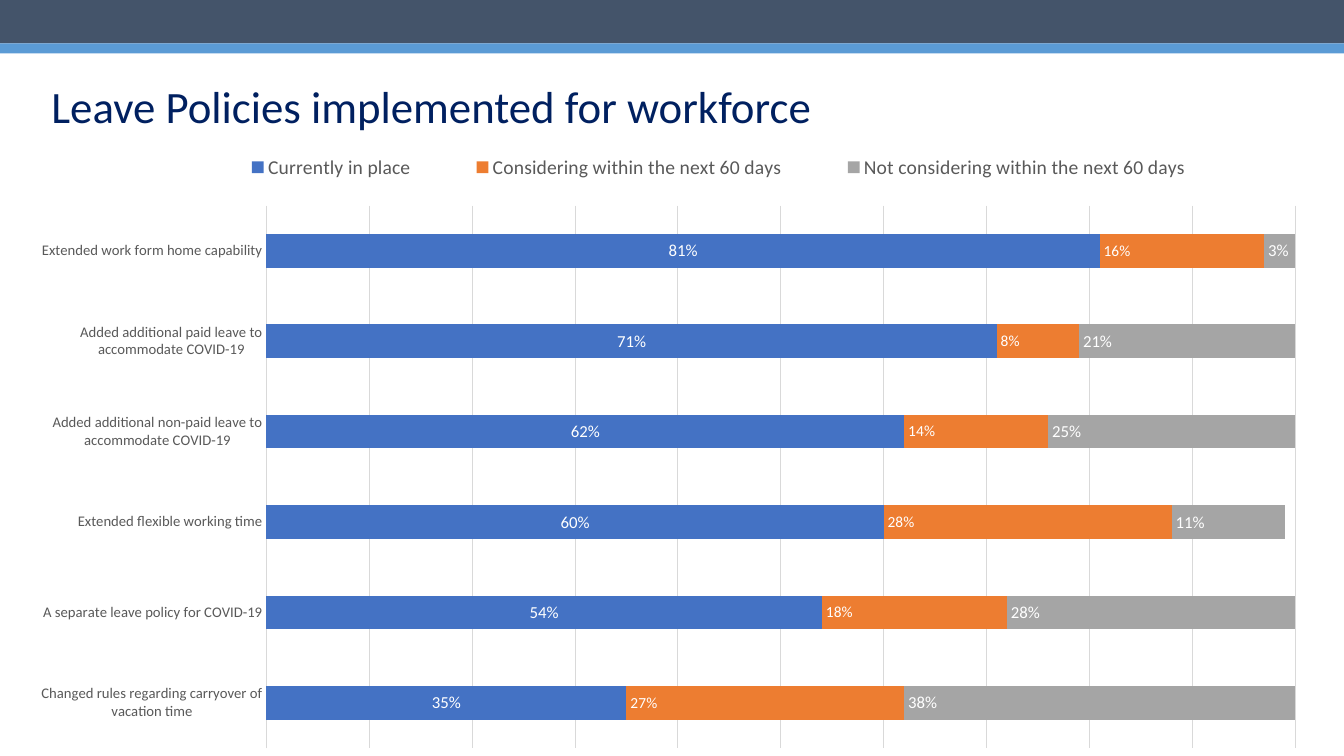
from lxml import etree
from pptx import Presentation
from pptx import util as u
from pptx.chart.data import CategoryChartData
from pptx.dml.color import RGBColor
from pptx.enum import chart as ch, shapes, text
from pptx.oxml.ns import qn

TITLE = "Leave Policies implemented for workforce"
FONT = "Calibri"
COLORS = {
    "navy": "44546A", "sky": "5B9BD5", "title": "002060", "label": "595959",
    "grid": "D9D9D9", "white": "FFFFFF", "black": "000000",
    "blue": "4472C4", "orange": "ED7D31", "gray": "A5A5A5",
}
BANDS = [("navy", 0.43), ("sky", 0.1)]
SERIES = [
    ("Currently in place", "blue", 12, ch.XL_LABEL_POSITION.CENTER),
    ("Considering within the next 60 days", "orange", 11, ch.XL_LABEL_POSITION.INSIDE_BASE),
    ("Not considering within the next 60 days", "gray", 12, ch.XL_LABEL_POSITION.INSIDE_BASE),
]
POLICIES = [
    ("Extended work form home capability", 0.81, 0.16, 0.03),
    ("Added additional paid leave to accommodate COVID-19", 0.71, 0.08, 0.21),
    ("Added additional non-paid leave to accommodate COVID-19", 0.62, 0.14, 0.25),
    ("Extended flexible working time", 0.6, 0.28, 0.11),
    ("A separate leave policy for COVID-19", 0.54, 0.18, 0.28),
    ("Changed rules regarding carryover of vacation time", 0.35, 0.27, 0.38),
]
WIDTH, HEIGHT = 13.33, 7.5
TITLE_BOX = (0.41, 0.36, 13.33, 1.45)
CHART_BOX = (0.41, 1.38, 12.44, 6.22)
PLOT_SHARE = (0.179, 0.106, 0.821, 0.866)
LEGEND_SHARE = (0.12, 0.01, 0.84, 0.07)


def rgb(name):
    return RGBColor.from_string(COLORS[name])


def inches(box):
    return [u.Inches(v) for v in box]


def style(font, size, color):
    font.name, font.size = FONT, u.Pt(size)
    font.color.rgb = rgb(color)


def grid_line(line):
    line.color.rgb = rgb("grid")
    line.width = u.Pt(0.75)


def place(parent, index, share, inner=False):
    for old in parent.findall(qn("c:layout")):
        parent.remove(old)
    layout = etree.Element(qn("c:layout"))
    manual = etree.SubElement(layout, qn("c:manualLayout"))
    settings = [("layoutTarget", "inner")] if inner else []
    settings += [("xMode", "edge"), ("yMode", "edge")]
    settings += zip("xywh", share)
    for tag, value in settings:
        etree.SubElement(manual, qn("c:" + tag)).set("val", str(value))
    parent.insert(index, layout)


def add_bands(s):
    top = 0
    for color, height in BANDS:
        sp = s.shapes.add_shape(shapes.MSO_SHAPE.RECTANGLE, *inches((0, top, WIDTH, height)))
        sp.shadow.inherit = False
        sp.fill.solid()
        sp.fill.fore_color.rgb = rgb(color)
        sp.line.fill.background()
        top += height


def add_title(s):
    title = s.shapes.title
    title.left, title.top, title.width, title.height = inches(TITLE_BOX)
    tf = title.text_frame
    tf.text = TITLE
    tf.word_wrap = True
    tf.auto_size = text.MSO_AUTO_SIZE.NONE
    tf.vertical_anchor = text.MSO_ANCHOR.MIDDLE
    p = tf.paragraphs[0]
    p.alignment, p.line_spacing = text.PP_ALIGN.LEFT, 0.9
    style(p.font, 32, "title")


def add_policy_chart(s):
    rows = POLICIES[::-1]
    data = CategoryChartData(number_format="0%")
    data.categories = [row[0] for row in rows]
    for i, (name, *_) in enumerate(SERIES, 1):
        data.add_series(name, [row[i] for row in rows])
    chart = s.shapes.add_chart(ch.XL_CHART_TYPE.BAR_STACKED, *inches(CHART_BOX), data).chart
    style(chart.font, 10, "black")
    chart.has_title = False

    plot = chart.plots[0]
    plot.gap_width, plot.overlap, plot.vary_by_categories = 170, 100, False
    for series, (_, color, size, position) in zip(plot.series, SERIES):
        series.format.fill.solid()
        series.format.fill.fore_color.rgb = rgb(color)
        labels = series.data_labels
        labels.show_value, labels.position = True, position
        labels.number_format, labels.number_format_is_linked = "0%", False
        style(labels.font, size, "white")

    cat = chart.category_axis
    cat.major_tick_mark = cat.minor_tick_mark = ch.XL_TICK_MARK.NONE
    style(cat.tick_labels.font, 10.5, "label")
    grid_line(cat.format.line)
    val = chart.value_axis
    val.minimum_scale, val.maximum_scale, val.major_unit = 0, 1, 0.1
    val.has_major_gridlines = True
    grid_line(val.major_gridlines.format.line)
    val.tick_labels.number_format, val.tick_labels.number_format_is_linked = "0%", False
    val.visible = False

    chart.has_legend = True
    legend = chart.legend
    legend.position, legend.include_in_layout = ch.XL_LEGEND_POSITION.TOP, True
    style(legend.font, 14, "label")
    root = chart.element
    place(root.find(".//" + qn("c:legend")), 1, LEGEND_SHARE)
    place(root.find(".//" + qn("c:plotArea")), 0, PLOT_SHARE, inner=True)


def main():
    prs = Presentation()
    prs.slide_width, prs.slide_height = inches((WIDTH, HEIGHT))
    s = prs.slides.add_slide(prs.slide_layouts[5])
    add_bands(s)
    add_title(s)
    add_policy_chart(s)
    prs.save("out.pptx")


if __name__ == "__main__":
    main()
